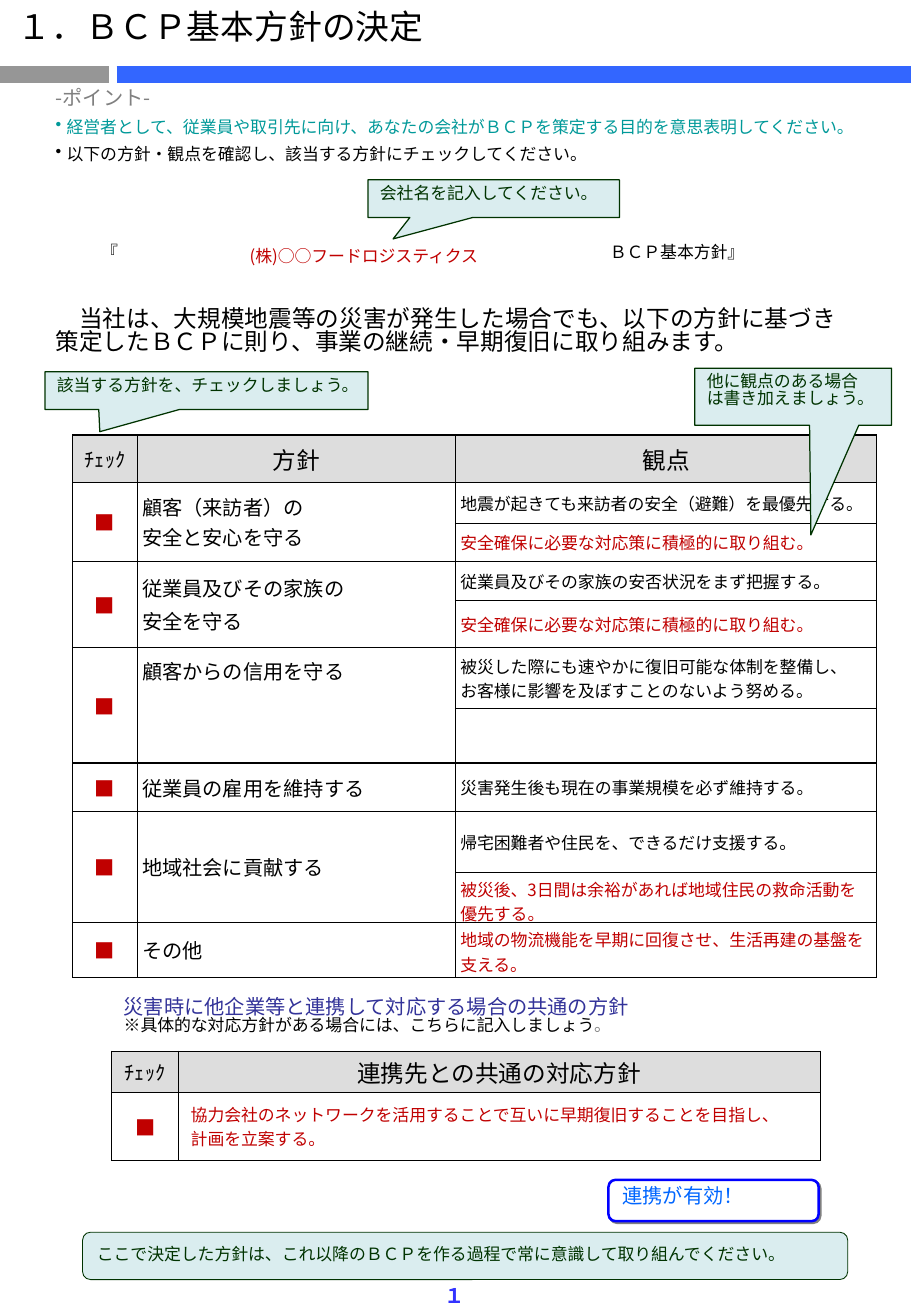
from copy import deepcopy

from lxml import etree
from pptx import Presentation
from pptx import util as u
from pptx.dml.color import RGBColor
from pptx.enum import shapes, text
from pptx.oxml.ns import qn

BLACK = RGBColor(0, 0, 0)
WHITE = RGBColor(0xFF, 0xFF, 0xFF)
GRAY = RGBColor(0x80, 0x80, 0x80)
SILVER = RGBColor(0x96, 0x96, 0x96)
HEAD = RGBColor(0xDD, 0xDD, 0xDD)
RED = RGBColor(0xC0, 0, 0)
GREEN = RGBColor(0, 0x33, 0)
PALE = RGBColor(0xDA, 0xED, 0xEF)
TEAL = RGBColor(0, 0x99, 0x99)
BAR = RGBColor(0x33, 0x66, 0xFF)
NAVY = RGBColor(0x33, 0x33, 0x99)
PAGE = RGBColor(0x33, 0x33, 0xFF)
BLUE = RGBColor(0, 0, 0xFF)
SKY = RGBColor(0, 0x66, 0xFF)

FONT = "Noto Sans CJK JP"
MID = text.MSO_ANCHOR.MIDDLE
LEFT, CENTER, RIGHT = text.PP_ALIGN.LEFT, text.PP_ALIGN.CENTER, text.PP_ALIGN.RIGHT
KIND = shapes.MSO_SHAPE
PLAIN = "{2D5ABB26-0587-4C30-8999-92F81FD0307C}"
TIGHT = 0.82

POLICY = [
    ("顧客（来訪者）の\v安全と安心を守る",
     [("地震が起きても来訪者の安全（避難）を最優先する。", BLACK),
      ("安全確保に必要な対応策に積極的に取り組む。", RED)]),
    ("従業員及びその家族の\n安全を守る",
     [("従業員及びその家族の安否状況をまず把握する。", BLACK),
      ("安全確保に必要な対応策に積極的に取り組む。", RED)]),
    ("顧客からの信用を守る",
     [("被災した際にも速やかに復旧可能な体制を整備し、\vお客様に影響を及ぼすことのないよう努める。", BLACK),
      ("", BLACK)]),
    ("従業員の雇用を維持する",
     [("災害発生後も現在の事業規模を必ず維持する。", BLACK)]),
    ("地域社会に貢献する",
     [("帰宅困難者や住民を、できるだけ支援する。", BLACK),
      ("被災後、3日間は余裕があれば地域住民の救命活動を\v優先する。", RED)]),
    ("その他",
     [("地域の物流機能を早期に回復させ、生活再建の基盤を支える。", RED)]),
]


def assign(obj, **form):
    for name, val in form.items():
        setattr(obj, name, val)


def add_run(par, words, size, color, font=FONT, bold=False):
    """Add words to par; a vertical tab breaks the line at the same size."""
    for i, line in enumerate(words.split("\v")):
        if i:
            par.add_line_break()
        run = par.add_run()
        run.text = line
        assign(run.font, size=u.Pt(size), name=font, bold=bold)
        run.font.color.rgb = color
        props = run.font._element
        etree.SubElement(props, qn("a:ea"), typeface=font)
        if i:
            run._r.getprevious().insert(0, deepcopy(props))


def write(frame, words, size, color, align=LEFT, tight=True, **style):
    """Fill a frame, one paragraph for each line of words."""
    for i, line in enumerate(words.split("\n")):
        par = frame.paragraphs[0] if i == 0 else frame.add_paragraph()
        par.alignment = align
        if tight:
            par.line_spacing = TIGHT
        elif i:
            par.space_before = u.Pt(size * 0.2)
        add_run(par, line, size, color, **style)


def add_text(slide, box, wrap=True):
    frame = slide.shapes.add_textbox(*map(u.Inches, box)).text_frame
    frame.word_wrap = wrap
    return frame


def add_box(slide, kind, box, adj, words, color=GREEN, size=10, fill=PALE,
            line=GREEN, width=0.75, anchor=text.MSO_ANCHOR.TOP):
    shape = slide.shapes.add_shape(kind, *map(u.Inches, box))
    for i, val in enumerate(adj):
        shape.adjustments[i] = val
    shape.shadow.inherit = False
    shape.fill.solid()
    shape.fill.fore_color.rgb = fill
    shape.line.color.rgb = line
    shape.line.width = u.Pt(width)
    assign(shape.text_frame, word_wrap=True, vertical_anchor=anchor)
    write(shape.text_frame, words, size, color)
    return shape


def add_bar(slide, left, right, color):
    top = u.Inches(0.61)
    bar = slide.shapes.add_connector(
        shapes.MSO_CONNECTOR.STRAIGHT, u.Inches(left), top, u.Inches(right), top)
    bar.line.color.rgb = color
    bar.line.width = u.Pt(10)
    etree.SubElement(bar._element.spPr, qn("a:effectLst"))


def add_shade(shape):
    glow = shape._element.spPr.find(qn("a:effectLst"))
    shade = etree.SubElement(glow, qn("a:outerShdw"), dist=str(u.Pt(1.4)),
                             dir="2700000", algn="ctr", rotWithShape="0")
    etree.SubElement(shade, qn("a:srgbClr"), val=str(GRAY))


def add_grid(slide, left, top, cols, rows):
    size = map(u.Inches, (left, top, sum(cols), sum(rows)))
    grid = slide.shapes.add_table(len(rows), len(cols), *size).table
    assign(grid, first_row=False, horz_banding=False)
    grid._tbl.tblPr.find(qn("a:tableStyleId")).text = PLAIN
    for col, width in zip(grid.columns, cols):
        col.width = u.Inches(width)
    for row, height in zip(grid.rows, rows):
        row.height = u.Inches(height)
    return grid


def format_cells(grid, inset, line=0):
    """Set insets, fill and borders of all cells; line is in points."""
    side, edge = map(u.Inches, inset)
    for i, row in enumerate(grid.rows):
        for cell in row.cells:
            assign(cell, margin_left=side, margin_right=side,
                   margin_top=edge, margin_bottom=edge)
            if not line:
                cell.fill.background()
                continue
            cell.vertical_anchor = MID
            cell.fill.solid()
            cell.fill.fore_color.rgb = WHITE if i else HEAD
            props = cell._tc.get_or_add_tcPr()
            for n, tag in enumerate(("a:lnL", "a:lnR", "a:lnT", "a:lnB")):
                rule = etree.Element(qn(tag), w=str(u.Pt(line)))
                fill = etree.SubElement(rule, qn("a:solidFill"))
                etree.SubElement(fill, qn("a:srgbClr"), val=str(BLACK))
                props.insert(n, rule)


def put(cell, words, size, color=BLACK, align=LEFT, **style):
    write(cell.text_frame, words, size, color, align, tight=False, **style)


def add_head(grid, *titles):
    for i, title in enumerate(("ﾁｪｯｸ",) + titles):
        put(grid.cell(0, i), title, 14 if i else 12, align=CENTER)


def add_policy(slide):
    grid = add_grid(slide, 0.6, 3.58, (0.53, 2.62, 3.47),
                    (0.39, 0.34, 0.31, 0.32, 0.39, 0.5, 0.45, 0.4, 0.5, 0.41, 0.45))
    format_cells(grid, (0.04, 0.04), 0.75)
    add_head(grid, "方針", "観点")
    top = 1
    for name, views in POLICY:
        end = top + len(views) - 1
        if end > top:
            for col in (0, 1):
                grid.cell(top, col).merge(grid.cell(end, col))
        put(grid.cell(top, 0), "■", 12, RED, CENTER)
        put(grid.cell(top, 1), name, 12)
        for i, (view, color) in enumerate(views):
            put(grid.cell(top + i, 2), view, 10, color)
        top = end + 1
    assign(grid.cell(5, 1), vertical_anchor=text.MSO_ANCHOR.TOP, margin_top=u.Inches(0.07))


def add_joint(slide):
    grid = add_grid(slide, 0.92, 8.65, (0.55, 5.28), (0.34, 0.56))
    format_cells(grid, (0.1, 0.03), 0.5)
    add_head(grid, "連携先との共通の対応方針")
    put(grid.cell(1, 0), "■", 12, RED, CENTER)
    put(grid.cell(1, 1), "協力会社のネットワークを活用することで互いに早期復旧することを目指し、\v計画を立案する。", 10, RED)


def add_firm(slide):
    grid = add_grid(slide, 0.59, 1.96, (0.38, 4.05, 2.12), (0.28,))
    format_cells(grid, (0, 0.04))
    put(grid.cell(0, 0), "『", 10, align=RIGHT, font="Arial")
    put(grid.cell(0, 1), "(株)○○フードロジスティクス", 10, RED, CENTER)
    put(grid.cell(0, 2), "ＢＣＰ基本方針』", 10, font="Arial")


def add_points(slide):
    frame = add_text(slide, (0.36, 0.69, 6.85, 0.81))
    points = [("-ポイント-", 12, GRAY),
              ("経営者として、従業員や取引先に向け、あなたの会社がＢＣＰを策定する目的を意思表明してください。", 10, TEAL),
              ("以下の方針・観点を確認し、該当する方針にチェックしてください。", 10, BLACK)]
    for i, (words, size, color) in enumerate(points):
        par = frame.add_paragraph() if i else frame.paragraphs[0]
        assign(par, line_spacing=TIGHT, space_after=u.Pt(6))
        props = par._p.get_or_add_pPr()
        props.set("marL", str(u.Inches(0.09)))
        props.set("indent", str(u.Inches(-0.09)))
        if i:
            etree.SubElement(props, qn("a:buChar"), char="•")
        add_run(par, words, size, color)


def main():
    deck = Presentation()
    assign(deck, slide_width=u.Inches(7.5), slide_height=u.Inches(10.83))
    slide = deck.slides.add_slide(deck.slide_layouts[6])
    add_bar(slide, 0, 0.9, SILVER)
    add_bar(slide, 0.96, 7.5, BAR)
    write(add_text(slide, (0.05, 0.06, 4.17, 0.43)), "１．ＢＣＰ基本方針の決定", 20, BLACK)
    add_policy(slide)
    write(add_text(slide, (0.36, 2.49, 6.85, 0.57)),
          "\u3000当社は、大規模地震等の災害が発生した場合でも、以下の方針に基づき\v"
          "策定したＢＣＰに則り、事業の継続・早期復旧に取り組みます。", 14, BLACK)
    write(add_text(slide, (3.56, 10.55, 0.37, 0.31), False), "１", 12, PAGE, CENTER, bold=True)
    add_joint(slide)
    frame = add_text(slide, (0.92, 8.17, 4.41, 0.47), False)
    write(frame, "災害時に他企業等と連携して対応する場合の共通の方針", 12, NAVY)
    note = frame.add_paragraph()
    note.line_spacing = TIGHT
    add_run(note, "※具体的な対応方針がある場合には、こちらに記入しましょう", 10, BLACK)
    add_run(note, "。", 10, GRAY)
    add_shade(add_box(slide, KIND.ROUNDED_RECTANGLE, (5.01, 9.71, 1.73, 0.34), (0.17,),
                      "連携が有効！", SKY, 12, WHITE, BLUE, 1.5))
    add_firm(slide)
    for box, adj, words in [
            ((3.03, 1.48, 2.07, 0.31), (-0.4, 1.07), "会社名を記入してください。"),
            ((0.37, 3.06, 2.66, 0.31), (-0.33, 1.09), "該当する方針を、チェックしましょう。"),
            ((5.72, 3.03, 1.62, 0.47), (0.09, 2.42), "他に観点のある場合\nは書き加えましょう。")]:
        add_box(slide, KIND.RECTANGULAR_CALLOUT, box, adj, words)
    add_points(slide)
    add_box(slide, KIND.ROUNDED_RECTANGLE, (0.68, 10.14, 6.3, 0.39), (0.17,),
            "ここで決定した方針は、これ以降のＢＣＰを作る過程で常に意識して取り組んでください。",
            width=0.5, anchor=MID)
    deck.save("out.pptx")


if __name__ == "__main__":
    main()
